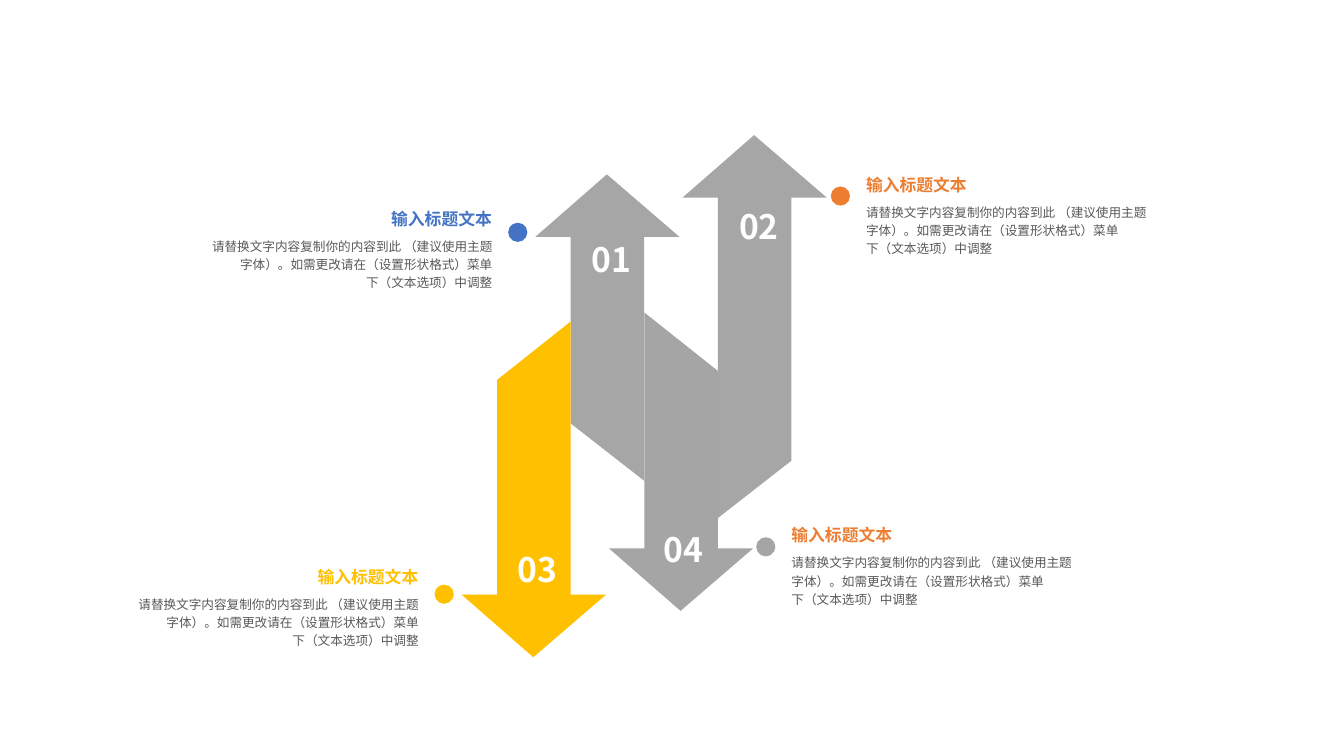
import pptx
import pptx.util
import pptx.dml.color
import pptx.enum.shapes
import pptx.enum.text
import pptx.oxml.ns
import lxml.etree

PX = 9144
FONT = "Noto Sans CJK SC"
HEADING = "输入标题文本"
BODY = "请替换文字内容复制你的内容到此 （建议使用主题\n字体）。如需更改请在（设置形状格式）菜单\n下（文本选项）中调整"
SHAFT_W, HEAD_W, HEAD_H, OVERLAP = 73, 143, 62, 6
DOT = 19
LEFT_EDGE, RIGHT_EDGE = 79, 1254
UP, DOWN = 1, -1

ARROWS = [
    (639, 606, DOWN, 310, 368, "A5A5A5"),
    (712, 134, UP, 514, 457, "A6A6A6"),
    (566, 173, UP, 420, 477, "A6A6A6"),
    (493, 652, DOWN, 377, 319, "FFC000"),
]
NUMBERS = [("01", 567, 227), ("02", 713, 194), ("03", 493, 535), ("04", 638, 515)]
CAPTIONS = [
    ("left", 504, 221, "4472C4", 207, "4472C4"),
    ("right", 824, 185, "ED7D31", 173, "ED7D31"),
    ("left", 431, 580, "FFC000", 562, "FFC000"),
    ("right", 750, 533, "A5A5A5", 521, "ED7D31"),
]


def rgb(color):
    return pptx.dml.color.RGBColor.from_string(color)


def paint(sp, color):
    sp.shadow.inherit = False
    sp.fill.solid()
    sp.fill.fore_color.rgb = rgb(color)
    sp.line.fill.background()


def add_polygon(s, points, color):
    builder = s.shapes.build_freeform(*points[0], scale=PX)
    builder.add_line_segments(points[1:], close=True)
    paint(builder.convert_to_shape(), color)


def add_arrow(s, x, tip, direction, left_end, right_end, color):
    base = tip + direction * HEAD_H
    start = base - direction * OVERLAP
    right = x + SHAFT_W
    add_polygon(s, [(x, start), (right, start), (right, right_end), (x, left_end)], color)
    center = x + SHAFT_W // 2
    head_left = center - HEAD_W // 2
    add_polygon(s, [(center, tip), (head_left + HEAD_W, base), (head_left, base)], color)


def add_text(s, box, text, size, color, margins, bold=False, wrap=False,
             align="LEFT", anchor="MIDDLE", spacing=None):
    tf = s.shapes.add_textbox(*(v * PX for v in box)).text_frame
    tf.word_wrap = wrap
    tf.vertical_anchor = getattr(pptx.enum.text.MSO_ANCHOR, anchor)
    tf.margin_left, tf.margin_top, tf.margin_right, tf.margin_bottom = (m * PX for m in margins)
    p = tf.paragraphs[0]
    p.text = text
    p.alignment = getattr(pptx.enum.text.PP_ALIGN, align)
    if spacing:
        p.line_spacing = spacing
    p.font.size = pptx.util.Pt(size)
    p.font.bold = bold
    p.font.color.rgb = rgb(color)
    p.font.name = FONT
    props = p._p.get_or_add_pPr().get_or_add_defRPr()
    lxml.etree.SubElement(props, pptx.oxml.ns.qn("a:ea"), typeface=FONT)


def add_number(s, text, x, y):
    add_text(s, (x, y, 78, 61), text, 24, "FFFFFF", (20, 10, 0, 10),
             bold=True, anchor="TOP")


def add_dot(s, x, y, color):
    oval = pptx.enum.shapes.MSO_SHAPE.OVAL
    paint(s.shapes.add_shape(oval, x * PX, y * PX, DOT * PX, DOT * PX), color)


def add_caption(s, side, dot_x, y, color):
    if side == "left":
        x, width, heading_x, heading_w = LEFT_EDGE, dot_x - LEFT_EDGE, dot_x - 117, 117
        margins, align = (0, 0, 16, 0), "RIGHT"
    else:
        x = heading_x = dot_x + DOT
        width, heading_w = RIGHT_EDGE - x, 133
        margins, align = (16, 0, 16, 0), "LEFT"
    add_text(s, (heading_x, y, heading_w, 20), HEADING, 12, color, margins,
             bold=True, align=align)
    add_text(s, (x, y + 20, width, 68), BODY, 9, "595959", margins,
             wrap=True, align=align, spacing=1.2)


def main():
    prs = pptx.Presentation()
    prs.slide_width, prs.slide_height = 1333 * PX, 750 * PX
    s = prs.slides.add_slide(prs.slide_layouts[6])
    for arrow in ARROWS:
        add_arrow(s, *arrow)
    for number in NUMBERS:
        add_number(s, *number)
    for side, dot_x, dot_y, dot_color, y, color in CAPTIONS:
        add_dot(s, dot_x, dot_y, dot_color)
        add_caption(s, side, dot_x, y, color)
    prs.save("out.pptx")


if __name__ == "__main__":
    main()
